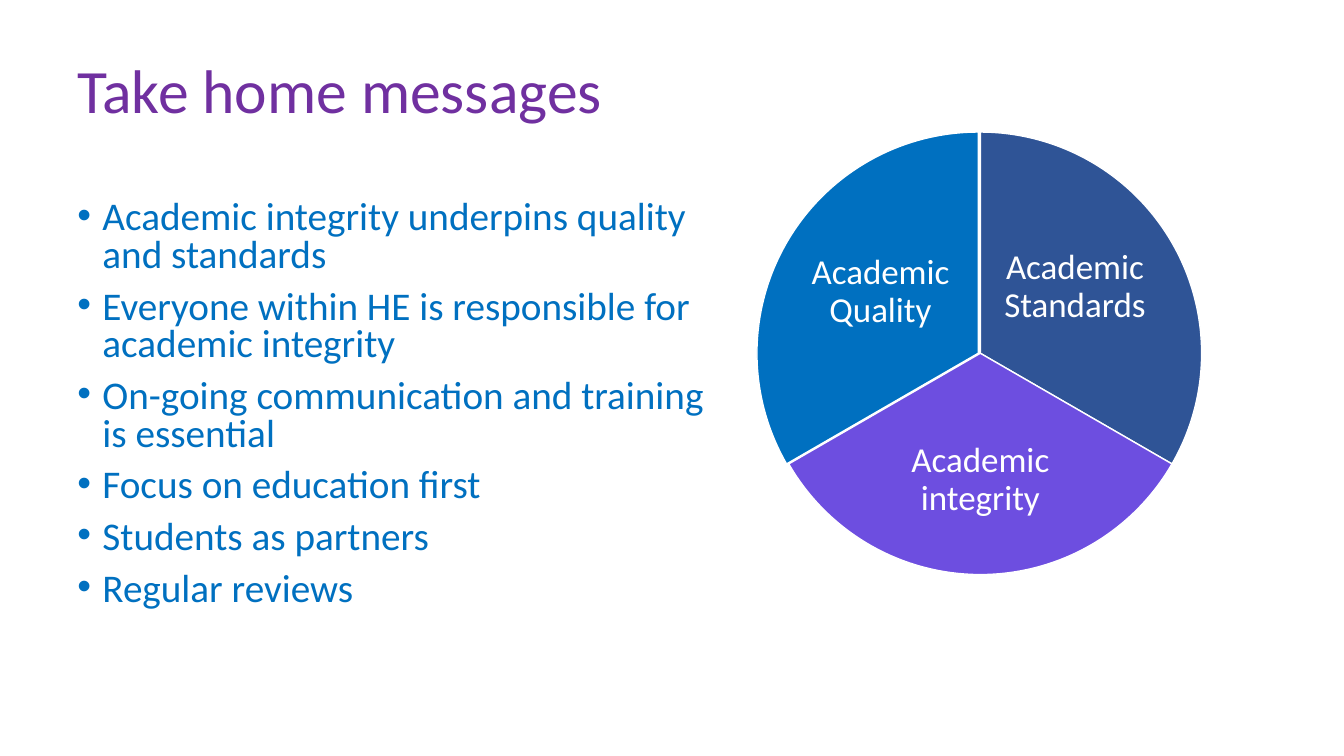
from lxml import etree
from pptx import Presentation
from pptx.dml.color import RGBColor
from pptx.enum.shapes import MSO_SHAPE
from pptx.enum.text import MSO_ANCHOR, MSO_AUTO_SIZE, PP_ALIGN
from pptx.oxml.ns import qn
from pptx.util import Pt

PIE = MSO_SHAPE.PIE
LEFT, CENTER = PP_ALIGN.LEFT, PP_ALIGN.CENTER
TOP, MIDDLE = MSO_ANCHOR.TOP, MSO_ANCHOR.MIDDLE
NO_AUTOFIT = MSO_AUTO_SIZE.NONE

PURPLE = RGBColor(0x70, 0x30, 0xA0)
BLUE = RGBColor(0x00, 0x70, 0xC0)
NAVY = RGBColor(0x2F, 0x54, 0x96)
VIOLET = RGBColor(0x6D, 0x4E, 0xE0)
WHITE = RGBColor(0xFF, 0xFF, 0xFF)

MESSAGES = [
    "Academic integrity underpins quality and standards",
    "Everyone within HE is responsible for academic integrity",
    "On-going communication and training is essential",
    "Focus on education first",
    "Students as partners",
    "Regular reviews",
]
PIE_TOP, PIE_SIZE = 94.3, 316.1
SECTORS = [
    ("Academic Standards", NAVY, 542.2, (162, 18), (714.2, 152.6, 107.3, 105.1)),
    ("Academic integrity", VIOLET, 542.2, (18, 90), (628.6, 293.8, 143.3, 97.9)),
    ("Academic Quality", BLUE, 540.7, (90, 162), (575.3, 156.2, 107.3, 105.1)),
]


def format_box(box, bounds, anchor, margins):
    for name, value in zip(("left", "top", "width", "height"), bounds):
        setattr(box, name, Pt(value))
    frame = box.text_frame
    sides = ("margin_left", "margin_top", "margin_right", "margin_bottom")
    settings = {"word_wrap": True, "auto_size": NO_AUTOFIT, "vertical_anchor": anchor}
    settings.update(zip(sides, map(Pt, margins)))
    for name, value in settings.items():
        setattr(frame, name, value)
    return frame


def write(para, text, size, color, alignment, line_spacing):
    para.alignment = alignment
    para.line_spacing = line_spacing
    span = para.add_run()
    span.text = text
    for name, value in {"name": "Calibri", "size": Pt(size), "bold": False}.items():
        setattr(span.font, name, value)
    span.font.color.rgb = color


deck = Presentation()
deck.slide_width, deck.slide_height = Pt(960), Pt(540)
page = deck.slides.add_slide(deck.slide_layouts[1])

title = format_box(page.shapes.title, (48, 21.6, 494.6, 90), MIDDLE, (7.2, 3.6, 7.2, 3.6))
write(title.paragraphs[0], "Take home messages", 44, PURPLE, LEFT, 0.9)

body = format_box(page.placeholders[1], (48, 139.7, 478.1, 322.6), TOP, (7.2, 3.6, 7.2, 3.6))
for index, message in enumerate(MESSAGES):
    para = body.add_paragraph() if index else body.paragraphs[0]
    para.space_before = Pt(10 if index else 0)
    write(para, message, 28, BLUE, LEFT, 0.8)
    properties = para._p.get_or_add_pPr()
    properties.set("marL", str(Pt(18)))
    properties.set("indent", str(-Pt(18)))
    bullet_color = etree.SubElement(properties, qn("a:buClr"))
    etree.SubElement(bullet_color, qn("a:srgbClr"), val=str(BLUE))
    etree.SubElement(properties, qn("a:buFont"), typeface="Arial")
    etree.SubElement(properties, qn("a:buChar"), char="•")

wheel = page.shapes.add_group_shape()
for label, color, left, angles, bounds in SECTORS:
    sector = wheel.shapes.add_shape(PIE, Pt(left), Pt(PIE_TOP), Pt(PIE_SIZE), Pt(PIE_SIZE))
    sector.shadow.inherit = False
    sector.adjustments[0], sector.adjustments[1] = angles
    sector.fill.solid()
    sector.fill.fore_color.rgb = color
    sector.line.color.rgb = WHITE
    sector.line.width = Pt(1)
    box = wheel.shapes.add_textbox(*map(Pt, bounds))
    frame = format_box(box, bounds, MIDDLE, (2.2, 2.2, 2.2, 2.2))
    write(frame.paragraphs[0], label, 25, WHITE, CENTER, 0.9)

deck.save("out.pptx")
